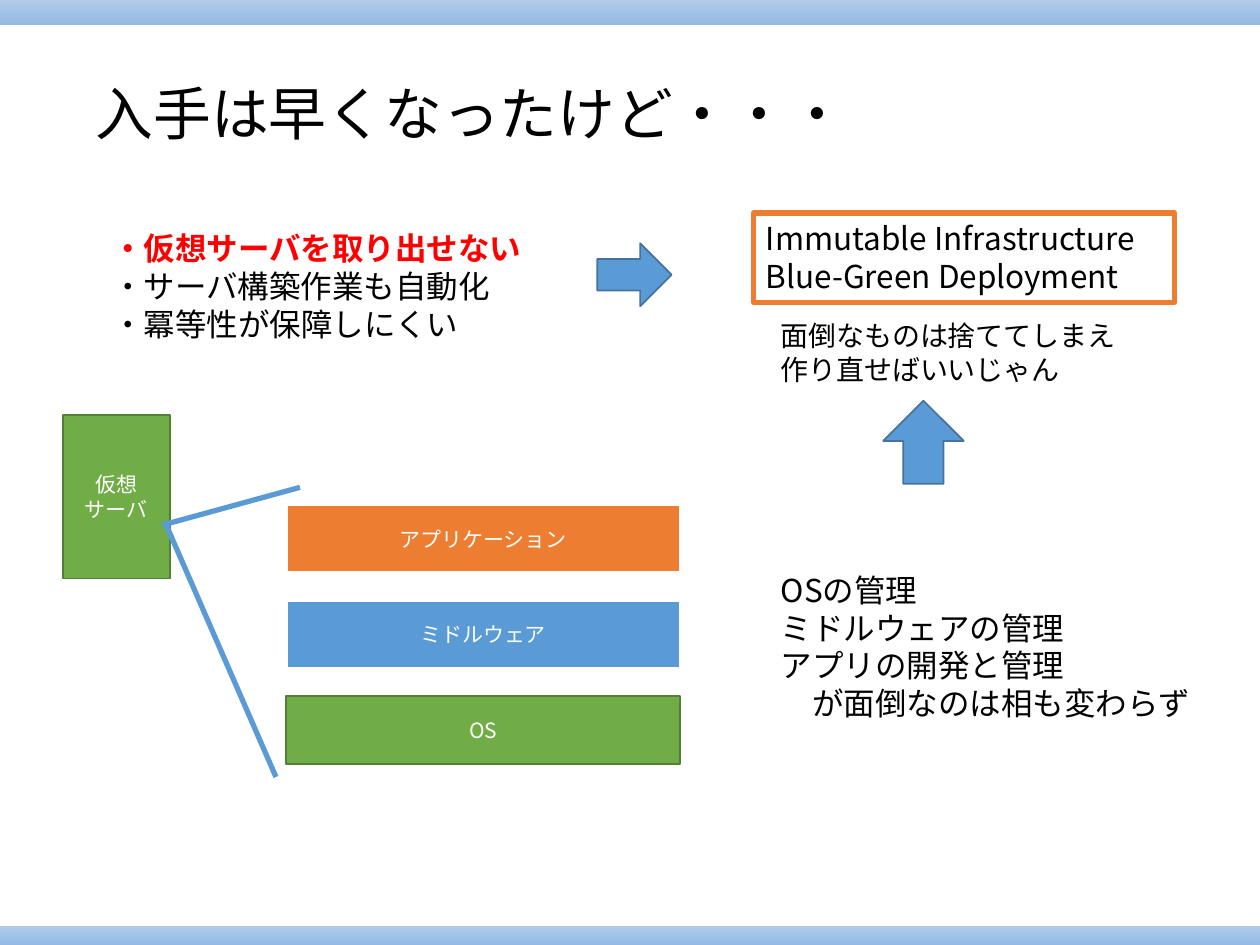
import pptx
import pptx.dml.color
import pptx.enum.shapes
import pptx.enum.text
import pptx.oxml
import pptx.oxml.ns
import pptx.util

Pt = pptx.util.Pt
Kind = pptx.enum.shapes.MSO_SHAPE
Align = pptx.enum.text.PP_ALIGN
Anchor = pptx.enum.text.MSO_ANCHOR
COLORS = {
    "black": "000000", "white": "FFFFFF", "red": "FF0000",
    "green": "70AD47", "moss": "538035", "blue": "5B9BD5",
    "navy": "43739E", "orange": "ED7D31", "pale": "B1CBE9", "sky": "93B9E4",
}


def color(name):
    return pptx.dml.color.RGBColor.from_string(COLORS[name])


class Deck:
    """Holds the text style and the current slide."""

    font = "Noto Sans CJK JP"

    def __init__(self, slide):
        self.slide = slide
        self.shapes = slide.shapes

    def style(self, frame, size, tint, align=Align.LEFT):
        for para in frame.paragraphs:
            para.alignment = align
            for run in para.runs:
                run.font.size = Pt(size)
                run.font.name = self.font
                run.font.color.rgb = color(tint)
                east = pptx.oxml.parse_xml(
                    f'<a:ea {pptx.oxml.ns.nsdecls("a")} typeface="{self.font}"/>')
                run.font._element.find(pptx.oxml.ns.qn("a:latin")).addnext(east)

    def title(self, text, box, size):
        shape = self.shapes.title
        shape.left, shape.top, shape.width, shape.height = map(Pt, box)
        frame = shape.text_frame
        frame.text = text
        frame.vertical_anchor = Anchor.MIDDLE
        frame.paragraphs[0].line_spacing = 0.9
        self.style(frame, size, "black")

    def shape(self, kind, box, fill, edge, width=1, text=""):
        shape = self.shapes.add_shape(kind, *map(Pt, box))
        shape.shadow.inherit = False
        shape.fill.solid()
        shape.fill.fore_color.rgb = color(fill)
        shape.line.color.rgb = color(edge)
        shape.line.width = Pt(width)
        if text:
            frame = shape.text_frame
            frame.text = text
            frame.vertical_anchor = Anchor.MIDDLE
            self.style(frame, 12, "white", Align.CENTER)

    def band(self, box):
        shape = self.shapes.add_shape(Kind.RECTANGLE, *map(Pt, box))
        shape.shadow.inherit = False
        shape.line.fill.background()
        shape.fill.gradient()
        shape.fill.gradient_angle = 270
        for stop, name in zip(shape.fill.gradient_stops, ("pale", "sky")):
            stop.color.rgb = color(name)

    def line(self, start, end, tint, width):
        line = self.shapes.add_connector(
            pptx.enum.shapes.MSO_CONNECTOR.STRAIGHT, *map(Pt, start + end))
        line.line.color.rgb = color(tint)
        line.line.width = Pt(width)
        line._element.spPr.append(pptx.oxml.parse_xml(
            f'<a:effectLst {pptx.oxml.ns.nsdecls("a")}/>'))

    def text(self, text, box, size=18, edge=None):
        shape = self.shapes.add_textbox(*map(Pt, box))
        frame = shape.text_frame
        frame.text = text
        frame.word_wrap = False
        frame.auto_size = pptx.enum.text.MSO_AUTO_SIZE.SHAPE_TO_FIT_TEXT
        self.style(frame, size, "black")
        if edge:
            shape.line.color.rgb = color(edge)
            shape.line.width = Pt(3)
        return frame


def main():
    show = pptx.Presentation()
    show.slide_width, show.slide_height = Pt(720), Pt(540)
    deck = Deck(show.slides.add_slide(show.slide_layouts[5]))

    for top, height in ((529, 11), (0, 14.4)):
        deck.band((0, top, 720, height))
    deck.title("入手は早くなったけど・・・", (47.5, 44, 620.5, 46), 33)

    deck.shape(Kind.RECTANGLE, (36, 237, 61, 93.6), "green", "moss",
               text="仮想\nサーバ")
    layers = (
        ("アプリケーション", "orange", "white", 1.5),
        ("ミドルウェア", "blue", "white", 1.5),
        ("OS", "green", "moss", 1),
    )
    for row, (name, fill, edge, width) in enumerate(layers):
        deck.shape(Kind.RECTANGLE, (163.6, 288.4 + 54.7 * row, 225, 38.9),
                   fill, edge, width, name)
    deck.line((95, 300), (157.7, 444), "blue", 3)
    deck.line((93, 300), (171.4, 278.5), "blue", 3)

    deck.text("OSの管理\nミドルウェアの管理\nアプリの開発と管理\n"
              "\u3000が面倒なのは相も変わらず".replace("\u3000", "　"),
              (439, 322.6, 250.6, 94.5))
    points = deck.text("・仮想サーバを取り出せない\n・サーバ構築作業も自動化\n"
                       "・冪等性が保障しにくい", (57, 127.4, 250.6, 72.7))
    key = points.paragraphs[0].runs[0].font
    key.bold = True
    key.color.rgb = color("red")
    deck.text("Immutable Infrastructure\nBlue-Green Deployment",
              (430.6, 121.7, 240.5, 51), edge="orange")
    deck.shape(Kind.RIGHT_ARROW, (341.3, 139, 42.5, 36), "blue", "navy")
    deck.shape(Kind.UP_ARROW, (504.7, 229, 46, 47.5), "blue", "navy")
    deck.text("面倒なものは捨ててしまえ\n作り直せばいいじゃん",
              (439, 178.6, 208, 46), size=16)

    show.save("out.pptx")


if __name__ == "__main__":
    main()
